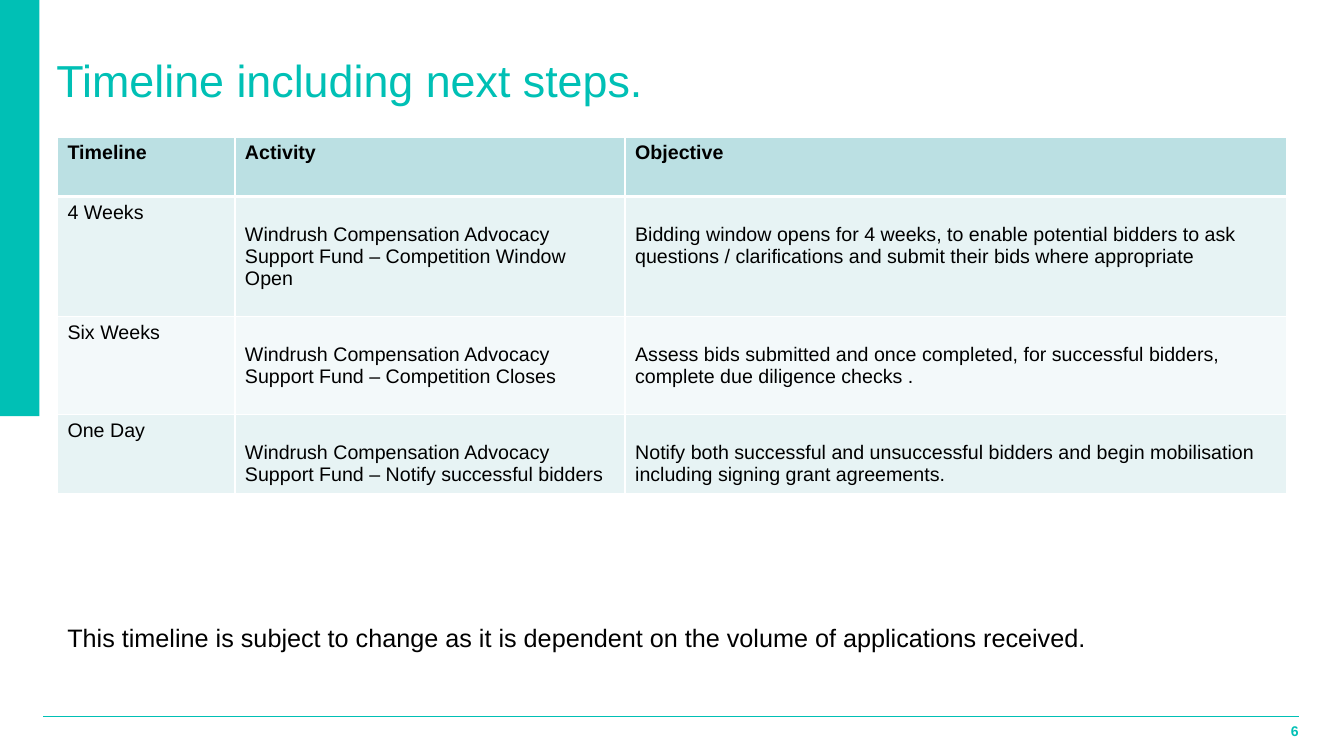
import dataclasses

import lxml.etree
import pptx
import pptx.dml.color
import pptx.enum.shapes
import pptx.enum.text
import pptx.oxml.ns
import pptx.util

Inches = pptx.util.Inches
Align = pptx.enum.text.PP_ALIGN


@dataclasses.dataclass(frozen=True)
class Theme:
    """Colours, font and type sizes of the slide."""
    font: str = "Arial"
    teal: str = "00C0B5"
    black: str = "000000"
    white: str = "FFFFFF"
    head: str = "BBE0E3"
    bands: tuple = ("E7F3F4", "F3F9FA")
    title: int = 32
    note: int = 18
    cell: int = 14
    page: int = 10


class Deck:
    """Draws styled elements on the current slide."""

    def __init__(self, theme):
        """Open a wide deck with one blank slide."""
        self.theme = theme
        self.file = pptx.Presentation()
        self.file.slide_width = Inches(13.33)
        self.file.slide_height = Inches(7.5)
        self.slide = self.file.slides.add_slide(self.file.slide_layouts[6])

    def color(self, code):
        """Turn a hex code into a colour."""
        return pptx.dml.color.RGBColor.from_string(code)

    def label(self, frame, text, size, color, bold=False, align=Align.LEFT):
        """Put one styled run into a text frame."""
        frame.word_wrap = True
        para = frame.paragraphs[0]
        para.alignment = align
        run = para.add_run()
        run.text = text
        run.font.name = self.theme.font
        run.font.size = pptx.util.Pt(size)
        run.font.bold = bold
        run.font.color.rgb = self.color(color)

    def bar(self, x, y, w, h):
        """Draw a plain teal bar."""
        shape = self.slide.shapes.add_shape(
            pptx.enum.shapes.MSO_SHAPE.RECTANGLE, *map(Inches, (x, y, w, h)))
        shape.shadow.inherit = False
        shape.fill.solid()
        shape.fill.fore_color.rgb = self.color(self.theme.teal)
        shape.line.fill.background()

    def rule(self, left, right, y):
        """Draw a thin level line."""
        line = self.slide.shapes.add_connector(
            pptx.enum.shapes.MSO_CONNECTOR.STRAIGHT,
            *map(Inches, (left, y, right, y)))
        line.line.color.rgb = self.color(self.theme.teal)
        line.line.width = pptx.util.Pt(0.75)
        props = line._element.spPr
        lxml.etree.SubElement(props, pptx.oxml.ns.qn("a:effectLst"))

    def text(self, x, y, w, h, words, size, color, inset=0, **style):
        """Add a text box with even insets at the sides."""
        frame = self.slide.shapes.add_textbox(
            *map(Inches, (x, y, w, h))).text_frame
        frame.margin_left = frame.margin_right = Inches(inset)
        frame.margin_top = frame.margin_bottom = Inches(inset / 2)
        self.label(frame, words, size, color, **style)

    def edge(self, cell, base):
        """Give a cell white borders with a chosen base width."""
        props = cell._tc.get_or_add_tcPr()
        for spot, (side, width) in enumerate(
                zip("LRTB", (1, 1, 1, base))):
            line = lxml.etree.Element(
                pptx.oxml.ns.qn(f"a:ln{side}"), w=str(pptx.util.Pt(width)))
            fill = lxml.etree.SubElement(
                line, pptx.oxml.ns.qn("a:solidFill"))
            lxml.etree.SubElement(
                fill, pptx.oxml.ns.qn("a:srgbClr"), val=self.theme.white)
            props.insert(spot, line)

    def table(self, x, y, widths, heights, rows):
        """Add a banded table with a bold head row."""
        theme = self.theme
        size = map(Inches, (x, y, sum(widths), sum(heights)))
        grid = self.slide.shapes.add_table(
            len(rows), len(widths), *size).table
        for col, width in zip(grid.columns, widths):
            col.width = Inches(width)
        for r, (row, height) in enumerate(zip(rows, heights)):
            grid.rows[r].height = Inches(height)
            for c, words in enumerate(row):
                cell = grid.cell(r, c)
                cell.margin_top = Inches(0.27 if r and c else 0.05)
                cell.fill.solid()
                cell.fill.fore_color.rgb = self.color(
                    theme.bands[(r - 1) % 2] if r else theme.head)
                self.edge(cell, 1 if r else 3)
                self.label(cell.text_frame, words, theme.cell,
                           theme.black, bold=r == 0)


def main():
    """Build and save the timeline slide."""
    theme = Theme()
    deck = Deck(theme)
    deck.bar(0, 0, 0.39, 4.13)
    deck.rule(0.43, 12.88, 7.11)
    deck.text(12.14, 7.17, 0.74, 0.16, "6", theme.page, theme.teal,
              bold=True, align=Align.RIGHT)
    deck.text(0.56, 0.52, 12.28, 0.51, "Timeline including next steps.",
              theme.title, theme.teal)
    fund = "Windrush Compensation Advocacy Support Fund – "
    deck.table(0.57, 1.36, (1.76, 3.87, 6.56), (0.59, 1.19, 0.97, 0.76), (
        ("Timeline", "Activity", "Objective"),
        ("4 Weeks", fund + "Competition Window Open",
         "Bidding window opens for 4 weeks, to enable potential bidders to "
         "ask questions / clarifications and submit their bids where "
         "appropriate"),
        ("Six Weeks", fund + "Competition Closes",
         "Assess bids submitted and once completed, for successful bidders, "
         "complete due diligence checks ."),
        ("One Day", fund + "Notify successful bidders",
         "Notify both successful and unsuccessful bidders and begin "
         "mobilisation including signing grant agreements."),
    ))
    deck.text(0.57, 6.12, 12.14, 0.39,
              "This timeline is subject to change as it is dependent on the "
              "volume of applications received.",
              theme.note, theme.black, inset=0.1)
    deck.file.save("out.pptx")


if __name__ == "__main__":
    main()
